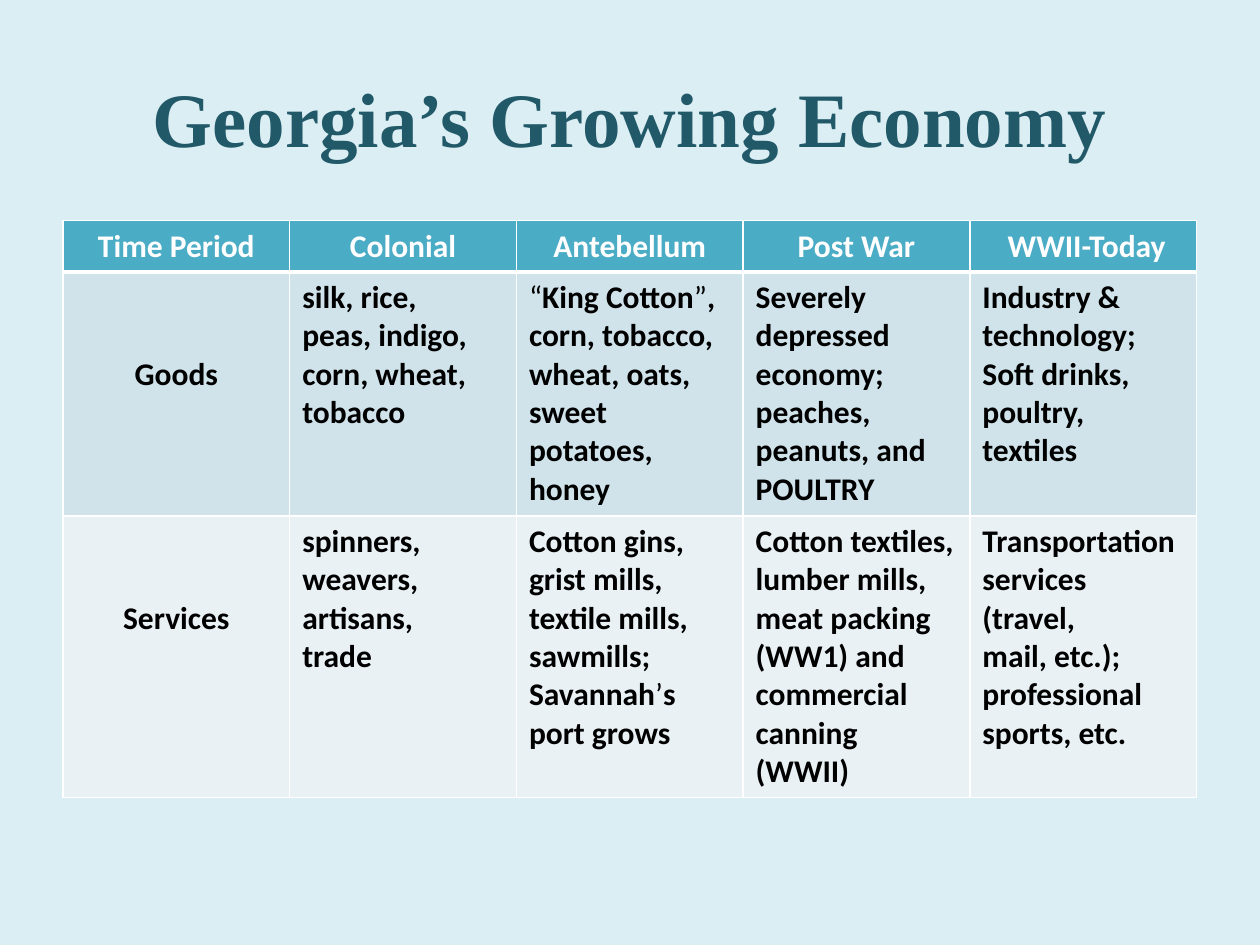
import itertools

import pptx
import pptx.dml.color
import pptx.enum.text
import pptx.oxml
import pptx.oxml.ns
import pptx.util

Cm, Pt = pptx.util.Cm, pptx.util.Pt
ALIGN = pptx.enum.text.PP_ALIGN

TITLE = "Georgia’s Growing Economy"
HEADER = ["Time Period", "Colonial", "Antebellum", "Post War", " WWII-Today"]
ROWS = [
    [
        ["Goods"],
        ["silk, rice,", "peas, indigo,", "corn, wheat,", "tobacco"],
        ["“King Cotton”,", "corn, tobacco,", "wheat, oats,", "sweet potatoes,", "honey"],
        ["Severely", "depressed", "economy;", "peaches,", "peanuts, and", "POULTRY"],
        ["Industry &", "technology;", "Soft drinks,", "poultry, textiles"],
    ],
    [
        ["Services"],
        ["spinners,", "weavers,", "artisans,", "trade"],
        ["Cotton gins,", "grist mills,", "textile mills,", "sawmills;", "Savannah’s", "port grows"],
        ["Cotton textiles,", "lumber mills,", "meat packing", "(WW1) and",
         "commercial", "canning", "(WWII)"],
        ["Transportation", "services (travel,", "mail, etc.);", "professional", "sports, etc."],
    ],
]
LIGHT_MARKS = "“”’"  # set in regular weight inside the bold text

COLORS = {
    "background": "DBEEF4",
    "title": "215968",
    "header": "4BACC6",
    "goods": "D0E3EA",
    "services": "E9F1F5",
    "white": "FFFFFF",
    "black": "000000",
}
ROW_FILLS = ["header", "goods", "services"]
ROW_HEIGHTS = [1.03, 4.92, 5.68]
COLUMN_WIDTH = 4.57
LABEL_TOP = 1.68
TITLE_FONT = {"name": "Times New Roman", "size": Pt(44), "bold": True}
CELL_FONT = {"name": "Calibri", "size": Pt(18)}


def rgb(name):
    return pptx.dml.color.RGBColor.from_string(COLORS[name])


def add_run(p, text, color, **font):
    r = p.add_run()
    r.text = text
    for key, value in font.items():
        setattr(r.font, key, value)
    r.font.color.rgb = rgb(color)


def set_borders(cell, bottom):
    tc_pr = cell._tc.get_or_add_tcPr()
    for side, width in {"L": 1, "R": 1, "T": 1, "B": bottom}.items():
        tc_pr.append(pptx.oxml.parse_xml(
            f'<a:ln{side} {pptx.oxml.ns.nsdecls("a")} w="{Pt(width)}"><a:solidFill>'
            f'<a:srgbClr val="{COLORS["white"]}"/></a:solidFill></a:ln{side}>'))


def fill_cell(cell, lines, row, col):
    is_header = row == 0
    set_borders(cell, 3 if is_header else 1)
    cell.fill.solid()
    cell.fill.fore_color.rgb = rgb(ROW_FILLS[row])
    if col == 0 and not is_header:
        cell.margin_top = Cm(LABEL_TOP)
    tf = cell.text_frame
    for i, line in enumerate(lines):
        p = tf.paragraphs[0] if i == 0 else tf.add_paragraph()
        p.alignment = ALIGN.CENTER if is_header or col == 0 else ALIGN.LEFT
        for light, chars in itertools.groupby(line, lambda c: c in LIGHT_MARKS):
            add_run(p, "".join(chars), "white" if is_header else "black",
                    bold=not light, **CELL_FONT)


def main():
    prs = pptx.Presentation()
    prs.slide_width, prs.slide_height = Cm(25.4), Cm(19.05)
    s = prs.slides.add_slide(prs.slide_layouts[5])
    s.background.fill.solid()
    s.background.fill.fore_color.rgb = rgb("background")

    title = s.shapes.title
    title.left, title.top, title.width, title.height = map(Cm, (1.27, 0.76, 22.86, 3.18))
    p = title.text_frame.paragraphs[0]
    p.alignment = ALIGN.CENTER
    add_run(p, TITLE, "title", **TITLE_FONT)

    rows = [[[name] for name in HEADER]] + ROWS
    table = s.shapes.add_table(
        len(rows), len(HEADER), Cm(1.27), Cm(4.45),
        Cm(COLUMN_WIDTH * len(HEADER)), Cm(sum(ROW_HEIGHTS))).table
    for column in table.columns:
        column.width = Cm(COLUMN_WIDTH)
    for row, cells in enumerate(rows):
        table.rows[row].height = Cm(ROW_HEIGHTS[row])
        for col, lines in enumerate(cells):
            fill_cell(table.cell(row, col), lines, row, col)

    prs.save("out.pptx")


if __name__ == "__main__":
    main()
